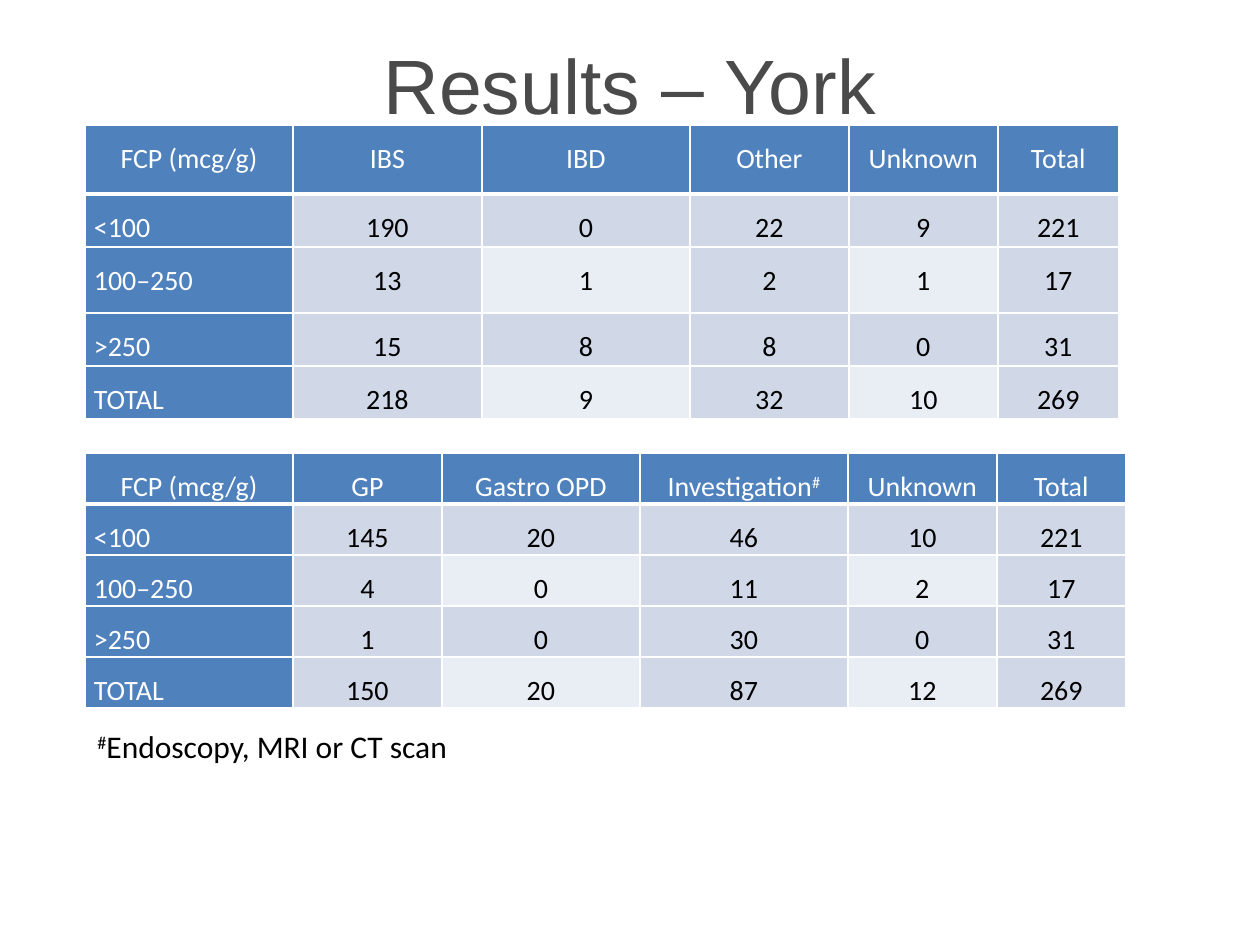
import pptx
import pptx.util
import pptx.dml.color
import pptx.enum.text
import pptx.oxml
import pptx.oxml.ns
from lxml import etree

RGB = pptx.dml.color.RGBColor
ALIGN = pptx.enum.text.PP_ALIGN
ANCHOR = pptx.enum.text.MSO_ANCHOR

PX = 914400 // 126
WHITE = RGB(0xFF, 0xFF, 0xFF)
BLACK = RGB(0x00, 0x00, 0x00)
GREY = RGB(0x4A, 0x4A, 0x4A)
BLUE = RGB(0x4F, 0x81, 0xBD)
BAND = RGB(0xD0, 0xD8, 0xE8)
PALE = RGB(0xE9, 0xED, 0xF4)

DIAGNOSIS = [
    ["FCP (mcg/g)", "IBS", "IBD", "Other", "Unknown", "Total"],
    ["<100", "190", "0", "22", "9", "221"],
    ["100–250", "13", "1", "2", "1", "17"],
    [">250", "15", "8", "8", "0", "31"],
    ["TOTAL", "218", "9", "32", "10", "269"],
]
REFERRAL = [
    ["FCP (mcg/g)", "GP", "Gastro OPD", "Investigation#", "Unknown", "Total"],
    ["<100", "145", "20", "46", "10", "221"],
    ["100–250", "4", "0", "11", "2", "17"],
    [">250", "1", "0", "30", "0", "31"],
    ["TOTAL", "150", "20", "87", "12", "269"],
]


def px(count):
    return pptx.util.Emu(count * PX)


def write(frame, text, size, color, align=ALIGN.LEFT, name="Calibri"):
    para = frame.paragraphs[0]
    para.alignment = align
    font = para.font
    font.size = pptx.util.Pt(size)
    font.name = name
    font.color.rgb = color
    for part in text.partition("#"):
        if part:
            run = para.add_run()
            run.text = part
            if part == "#":
                run.font._element.set("baseline", "30000")
    return para


def add_text(slide, box, text, size, color, wrap=True, **style):
    frame = slide.shapes.add_textbox(*map(px, box)).text_frame
    frame.word_wrap = wrap
    write(frame, text, size, color, **style)
    return frame


def set_edges(cell, head):
    props = cell._tc.get_or_add_tcPr()
    fill = props[0]
    for side in ("lnL", "lnR", "lnT", "lnB"):
        width = 3 if head and side == "lnB" else 1
        line = etree.Element(pptx.oxml.ns.qn("a:" + side), w=str(width * 12700))
        solid = etree.SubElement(line, pptx.oxml.ns.qn("a:solidFill"))
        etree.SubElement(solid, pptx.oxml.ns.qn("a:srgbClr"), val=str(WHITE))
        fill.addprevious(line)


def pick_fill(row, col):
    if row == 0 or col == 0:
        return BLUE
    return PALE if row % 2 == 0 and col % 2 == 0 else BAND


def add_grid(slide, left, top, cols, rows, data):
    box = map(px, (left, top, sum(cols), sum(rows)))
    table = slide.shapes.add_table(len(rows), len(cols), *box).table
    table.first_row = False
    table.horz_banding = False
    for col, width in enumerate(cols):
        table.columns[col].width = px(width)
    for row, height in enumerate(rows):
        table.rows[row].height = px(height)
        for col, text in enumerate(data[row]):
            cell = table.cell(row, col)
            cell.margin_left = cell.margin_right = px(9)
            cell.margin_top = cell.margin_bottom = 0
            cell.vertical_anchor = ANCHOR.TOP
            cell.fill.solid()
            cell.fill.fore_color.rgb = pick_fill(row, col)
            set_edges(cell, row == 0)
            color = BLACK if row and col else WHITE
            align = ALIGN.LEFT if row and col == 0 else ALIGN.CENTER
            para = write(cell.text_frame, text, 16, color, align)
            para.line_spacing = 1.5


def main():
    deck = pptx.Presentation()
    deck.slide_width = px(1260)
    deck.slide_height = px(945)
    slide = deck.slides.add_slide(deck.slide_layouts[6])
    title = add_text(slide, (63, 68, 1134, 117), "Results – York", 44, GREY,
                     align=ALIGN.CENTER, name="Arial")
    title.vertical_anchor = ANCHOR.MIDDLE
    title.margin_bottom = px(92)
    add_grid(slide, 85, 125, [208, 189, 208, 159, 149, 121],
             [69, 53, 66, 53, 53], DIAGNOSIS)
    add_grid(slide, 85, 453, [208, 149, 198, 208, 149, 129],
             [51] * 5, REFERRAL)
    add_text(slide, (85, 721, 432, 50), "#Endoscopy, MRI or CT scan", 18,
             BLACK, wrap=False)
    deck.save("out.pptx")


if __name__ == "__main__":
    main()
